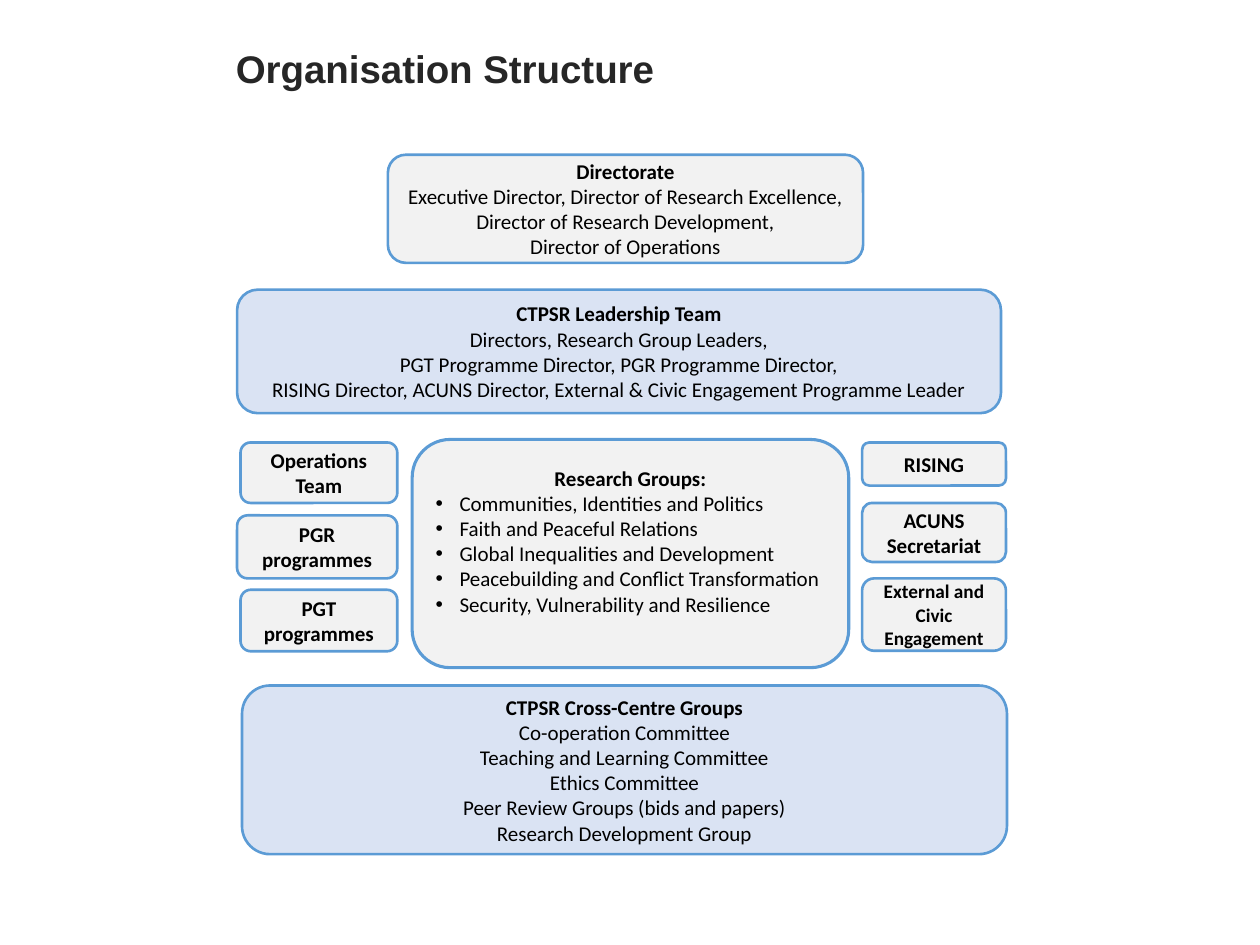
from dataclasses import dataclass

from lxml import etree
from pptx import Presentation
from pptx import util as u
from pptx.dml.color import RGBColor
from pptx.enum import shapes, text
from pptx.oxml import ns


@dataclass(frozen=True)
class Theme:
    heading_font: str = "Arial"
    body_font: str = "Calibri"
    heading: str = "262626"
    ink: str = "000000"
    border: str = "5B9BD5"
    blue: str = "DAE3F3"
    grey: str = "F2F2F2"
    title_size: float = 22
    body_size: float = 12
    small_size: float = 11
    line: float = 1.5
    thick_line: float = 1.75


class Chart:
    def __init__(self, slide, theme):
        self.slide = slide
        self.theme = theme

    def style(self, p, font, size, color, bold):
        for r in p.runs:
            r.font.name = font
            r.font.size = u.Pt(size)
            r.font.bold = bold
            r.font.color.rgb = RGBColor.from_string(color)

    def title(self, wording, left, top, width, height):
        t = self.theme
        sp = self.slide.shapes.title
        sp.left, sp.top, sp.width, sp.height = map(u.Cm, (left, top, width, height))
        tf = sp.text_frame
        tf.text = wording
        tf.vertical_anchor = text.MSO_ANCHOR.TOP
        p = tf.paragraphs[0]
        p.alignment = text.PP_ALIGN.LEFT
        p.line_spacing = 0.9
        self.style(p, t.heading_font, t.title_size, t.heading, True)

    def bullet(self, p):
        pPr = p._p.get_or_add_pPr()
        pPr.set("marL", str(u.Cm(0.48)))
        pPr.set("indent", str(-u.Cm(0.48)))
        etree.SubElement(pPr, ns.qn("a:buFont")).set("typeface", "Arial")
        etree.SubElement(pPr, ns.qn("a:buChar")).set("char", "•")

    def box(self, place, heading, lines=(), fill=None, size=None, line=None,
            bulleted=False, bottom=0.13):
        t = self.theme
        sp = self.slide.shapes.add_shape(
            shapes.MSO_SHAPE.ROUNDED_RECTANGLE, *map(u.Cm, place))
        sp.shadow.inherit = False
        sp.fill.solid()
        sp.fill.fore_color.rgb = RGBColor.from_string(fill or t.grey)
        sp.line.color.rgb = RGBColor.from_string(t.border)
        sp.line.width = u.Pt(line or t.line)
        tf = sp.text_frame
        tf.word_wrap = True
        tf.vertical_anchor = text.MSO_ANCHOR.MIDDLE
        tf.margin_bottom = u.Cm(bottom)
        tf.text = "\n".join([heading, *lines])
        for i, p in enumerate(tf.paragraphs):
            if bulleted and i:
                p.alignment = text.PP_ALIGN.LEFT
                self.bullet(p)
            else:
                p.alignment = text.PP_ALIGN.CENTER
            self.style(p, t.body_font, size or t.body_size, t.ink, i == 0)


def main():
    prs = Presentation()
    prs.slide_width, prs.slide_height = u.Cm(25.4), u.Cm(19.05)
    theme = Theme()
    chart = Chart(prs.slides.add_slide(prs.slide_layouts[5]), theme)

    chart.title("Organisation Structure", 4.5, 0.89, 18.72, 2.67)
    chart.box((7.82, 3.12, 9.58, 2.18), "Directorate", [
        "Executive Director, Director of Research Excellence, "
        "Director of Research Development,",
        "Director of Operations",
    ])
    chart.box((4.78, 5.84, 15.4, 2.49), "CTPSR Leadership Team", [
        "Directors, Research Group Leaders,",
        "PGT Programme Director, PGR Programme Director,",
        "RISING Director, ACUNS Director, "
        "External & Civic Engagement Programme Leader",
    ], fill=theme.blue)

    for name, left, top, height in (
        ("Operations Team", 4.85, 8.92, 1.22),
        ("PGR programmes", 4.78, 10.39, 1.27),
        ("PGT programmes", 4.85, 11.89, 1.24),
    ):
        chart.box((left, top, 8.01 - left, height), name)

    chart.box((8.31, 8.86, 8.8, 4.6), "Research Groups:", [
        "Communities, Identities and Politics",
        "Faith and Peaceful Relations",
        "Global Inequalities and Development",
        "Peacebuilding and Conflict Transformation",
        "Security, Vulnerability and Resilience",
    ], line=theme.thick_line, bulleted=True, bottom=0.64)

    for name, top, height, size in (
        ("RISING", 8.92, 0.87, theme.body_size),
        ("ACUNS Secretariat", 10.14, 1.19, theme.body_size),
        ("External and Civic Engagement", 11.66, 1.46, theme.small_size),
    ):
        chart.box((17.38, top, 2.9, height), name, size=size)

    chart.box((4.88, 13.82, 15.42, 3.4), "CTPSR Cross-Centre Groups", [
        "Co-operation Committee",
        "Teaching and Learning Committee",
        "Ethics Committee",
        "Peer Review Groups (bids and papers)",
        "Research Development Group",
    ], fill=theme.blue)

    prs.save("out.pptx")


if __name__ == "__main__":
    main()
